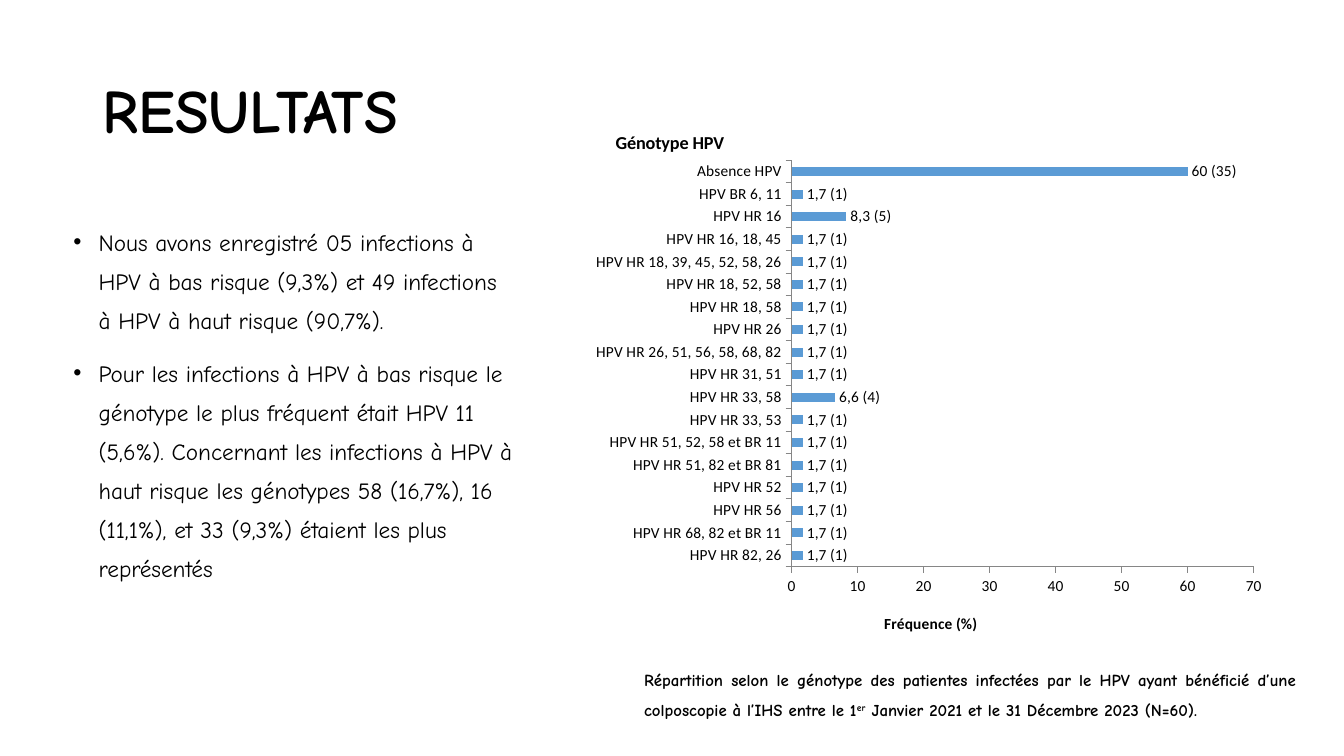
from lxml.etree import SubElement
from pptx import Presentation
from pptx.chart.data import CategoryChartData
from pptx.dml.color import RGBColor
from pptx.enum.chart import XL_CHART_TYPE, XL_LABEL_POSITION, XL_TICK_MARK
from pptx.enum.text import MSO_ANCHOR, PP_ALIGN
from pptx.oxml import parse_xml
from pptx.oxml.ns import nsdecls, qn
from pptx.util import Inches, Pt

COLORS = {"text": "000000", "bar": "5B9BD5", "axis": "868686"}
FACE = "Comic Neue"
CHART_FACE = "Calibri"

POINTS = [
    "Nous avons enregistré 05 infections à HPV à bas risque (9,3%) et 49 infections "
    "à HPV à haut risque (90,7%).",
    "Pour les infections à HPV à bas risque le génotype le plus fréquent était HPV 11 "
    "(5,6%). Concernant les infections à HPV à haut risque les génotypes 58 (16,7%), "
    "16 (11,1%), et 33 (9,3%) étaient les plus représentés",
]
CAPTION = [
    "Répartition selon le génotype des patientes infectées par le HPV ayant bénéficié "
    "d’une colposcopie à l’IHS entre le 1",
    "er",
    " Janvier 2021 et le 31 Décembre 2023 (N=60).",
]
GENOTYPES = [
    "HPV HR 82, 26", "HPV HR 68, 82 et BR 11", "HPV HR 56", "HPV HR 52",
    "HPV HR 51, 82 et BR 81", "HPV HR 51, 52, 58 et BR 11", "HPV HR 33, 53",
    "HPV HR 33, 58", "HPV HR 31, 51", "HPV HR 26, 51, 56, 58, 68, 82", "HPV HR 26",
    "HPV HR 18, 58", "HPV HR 18, 52, 58", "HPV HR 18, 39, 45, 52, 58, 26",
    "HPV HR 16, 18, 45", "HPV HR 16", "HPV BR 6, 11", "Absence HPV",
]
# Genotypes seen in more than one patient: (percent, count)
FREQUENT = {"HPV HR 33, 58": (6.6, 4), "HPV HR 16": (8.3, 5), "Absence HPV": (60, 35)}
SINGLE = (1.7, 1)


def rgb(name):
    return RGBColor.from_string(COLORS[name])


def style(font, size, bold=False, face=FACE):
    font.size = Pt(size)
    font.bold = bold
    font.name = face
    font.color.rgb = rgb("text")


def add_frame(slide, left, top, width, height):
    box = slide.shapes.add_textbox(
        Inches(left), Inches(top), Inches(width), Inches(height))
    box.text_frame.word_wrap = True
    return box.text_frame


def add_title(slide, text):
    frame = add_frame(slide, 0.92, 0.4, 11.5, 1.45)
    frame.vertical_anchor = MSO_ANCHOR.MIDDLE
    frame.text = text
    para = frame.paragraphs[0]
    para.line_spacing = 0.9
    style(para.runs[0].font, 44, True)


def add_bullets(slide, points):
    frame = add_frame(slide, 0.63, 2.1, 4.55, 4.76)
    frame.text = "\n".join(points)
    for para in frame.paragraphs:
        para.line_spacing = 1.4
        para.space_before = Pt(10)
        style(para.runs[0].font, 16.6)
        props = para._p.get_or_add_pPr()
        props.set("marL", str(Inches(0.25)))
        props.set("indent", str(-Inches(0.25)))
        SubElement(props, qn("a:buFont")).set("typeface", "Arial")
        SubElement(props, qn("a:buChar")).set("char", "•")


def add_caption(slide, parts):
    """Write the justified caption; its second part is raised."""
    para = add_frame(slide, 6.29, 6.49, 6.67, 1.01).paragraphs[0]
    para.alignment = PP_ALIGN.JUSTIFY
    para.line_spacing = 1.5
    for part in parts:
        run = para.add_run()
        run.text = part
        style(run.font, 12, True)
    para.runs[1]._r.get_or_add_rPr().set("baseline", "30000")


def place(node, index, **spots):
    """Give a chart part a manual layout, in fractions of the chart."""
    old = node.find(qn("c:layout"))
    if old is not None:
        node.remove(old)
    inner = '<c:layoutTarget val="inner"/>' if "w" in spots else ""
    modes = '<c:xMode val="edge"/><c:yMode val="edge"/>'
    sizes = "".join(f'<c:{key} val="{val}"/>' for key, val in spots.items())
    node.insert(index, parse_xml(
        f'<c:layout {nsdecls("c")}><c:manualLayout>{inner}{modes}{sizes}'
        "</c:manualLayout></c:layout>"))


def set_title(title, text, size, x, y):
    title.text_frame.text = text
    style(title.text_frame.paragraphs[0].runs[0].font, size, True, CHART_FACE)
    place(title.element, 1, x=x, y=y)


def style_axis(axis):
    axis.has_major_gridlines = False
    axis.major_tick_mark = XL_TICK_MARK.OUTSIDE
    axis.minor_tick_mark = XL_TICK_MARK.NONE
    axis.format.line.color.rgb = rgb("axis")
    axis.format.line.width = Pt(0.75)
    style(axis.tick_labels.font, 11, face=CHART_FACE)


def add_labels(series, stats):
    for index, (share, count) in enumerate(stats):
        label = series.points[index].data_label
        label.text_frame.text = f"{share} ({count})".replace(".", ",")
        style(label.text_frame.paragraphs[0].runs[0].font, 11, face=CHART_FACE)
        label.position = XL_LABEL_POSITION.OUTSIDE_END


def add_bars(slide):
    stats = [FREQUENT.get(name, SINGLE) for name in GENOTYPES]
    data = CategoryChartData()
    data.categories = GENOTYPES
    data.add_series("Génotype HPV", [share for share, _ in stats])
    chart = slide.shapes.add_chart(
        XL_CHART_TYPE.BAR_CLUSTERED, Inches(5.8), Inches(0.99),
        Inches(6.84), Inches(5.45), data).chart
    chart.has_legend = False
    style(chart.font, 11, face=CHART_FACE)
    chart.has_title = True
    set_title(chart.chart_title, "Génotype HPV", 13, 0.04, 0.05)

    style_axis(chart.category_axis)
    scale = chart.value_axis
    style_axis(scale)
    scale.minimum_scale, scale.maximum_scale, scale.major_unit = 0, 70, 10
    scale.has_title = True
    set_title(scale.axis_title, "Fréquence (%)", 11, 0.43, 0.93)

    plot = chart.plots[0]
    plot.gap_width = 150
    plot.vary_by_categories = False
    series = plot.series[0]
    series.format.fill.solid()
    series.format.fill.fore_color.rgb = rgb("bar")
    add_labels(series, stats)
    area = chart.element.find(".//" + qn("c:plotArea"))
    place(area, 0, x=0.3, y=0.11, w=0.67, h=0.74)


def main():
    deck = Presentation()
    deck.slide_width = Inches(13.33)
    deck.slide_height = Inches(7.5)
    slide = deck.slides.add_slide(deck.slide_layouts[6])
    add_title(slide, "RESULTATS")
    add_bullets(slide, POINTS)
    add_bars(slide)
    add_caption(slide, CAPTION)
    deck.save("out.pptx")


if __name__ == "__main__":
    main()
